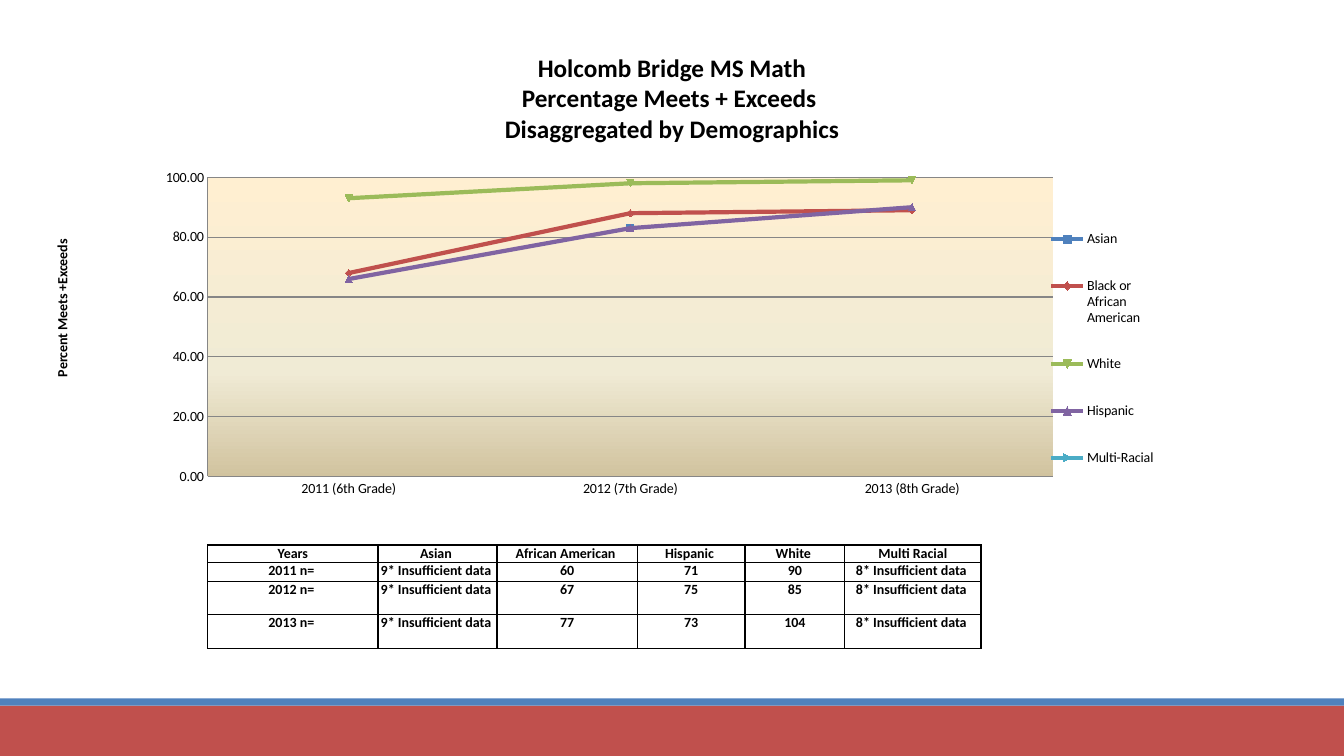
from lxml import etree
from pptx import Presentation, util as u
from pptx.chart.data import CategoryChartData
from pptx.dml.color import RGBColor
from pptx.enum import chart as ch, shapes, text
from pptx.oxml import parse_xml
from pptx.oxml.ns import nsdecls, qn

WIDTH, HEIGHT = 13.33, 7.5
FONT = "Calibri"
COLORS = {
    "ink": "000000", "grid": "868686", "band": "C0504D", "stripe": "4F81BD",
    "Asian": "4F81BD", "Black or African American": "C0504D", "White": "9BBB59",
    "Hispanic": "8064A2", "Multi-Racial": "4BACC6",
}
PLOT_GRADIENT = {0: "FFEFD1", 65: "F0EBD5", 100: "D1C39F"}
GRADES = ["2011 (6th Grade)", "2012 (7th Grade)", "2013 (8th Grade)"]
MEETS_EXCEEDS = {
    "Asian": (None, 83, None),
    "Black or African American": (68, 88, 89),
    "White": (93, 98, 99),
    "Hispanic": (66, 83, 90),
    "Multi-Racial": (None, None, None),
}
COUNTS = [
    ["Years", "Asian ", "African American ", "Hispanic ", "White ", "Multi Racial"],
    *[[f"{year} n= ", "9* Insufficient data ", *counts, "8* Insufficient data "]
      for year, counts in ((2011, ("60", "71", "90")),
                           (2012, ("67", "75", "85")),
                           (2013, ("77", "73", "104")))],
]
COUNT_COLUMNS = [1.69, 1.18, 1.39, 1.07, 0.99, 1.35]
COUNT_ROWS = [0.17, 0.19, 0.33, 0.34]
OPEN_ROWS = 12  # unruled rows of the table that lie behind the chart
TABLE_TOP, COUNTS_TOP = 3.21, 5.41


def rgb(name):
    return RGBColor.from_string(COLORS[name])


def inches(*lengths):
    return [u.Inches(length) for length in lengths]


def set_all(target, **values):
    for name, value in values.items():
        setattr(target, name, value)


def style_font(font, size, bold=False):
    set_all(font, name=FONT, size=u.Pt(size), bold=bold)
    font.color.rgb = rgb("ink")


def style_line(line, color, width):
    line.color.rgb = rgb(color)
    line.width = u.Pt(width)


def add_band(slide, top, height, color):
    band = slide.shapes.add_shape(shapes.MSO_SHAPE.RECTANGLE,
                                  *inches(0, top, WIDTH, height))
    band.shadow.inherit = False
    band.fill.solid()
    band.fill.fore_color.rgb = rgb(color)
    band.line.fill.background()


def write_title(slide, lines):
    title = slide.shapes.title
    set_all(title, **dict(zip(("left", "top", "width", "height"),
                              inches(3.33, 0.47, 6.67, 1.01))))
    set_all(title.text_frame, text="\v".join(lines), word_wrap=True,
            auto_size=text.MSO_AUTO_SIZE.NONE,
            vertical_anchor=text.MSO_ANCHOR.TOP)
    heading = title.text_frame.paragraphs[0]
    heading.alignment = text.PP_ALIGN.CENTER
    for run in heading.runs:
        style_font(run.font, 18, bold=True)


def place_in_chart(part, index, target=None, **shares):
    """Give a chart part a manual layout in shares of the chart's size."""
    for old in part.findall(qn("c:layout")):
        part.remove(old)
    layout = parse_xml(f'<c:layout {nsdecls("c")}><c:manualLayout/></c:layout>')
    settings = {"layoutTarget": target} if target else {}
    settings |= {f"{axis}Mode": "edge" for axis in "xy"} | shares
    for name, value in settings.items():
        etree.SubElement(layout[0], qn(f"c:{name}")).set("val", str(value))
    part.insert(index, layout)


def fill_plot(plot_area):
    stops = "".join(f'<a:gs pos="{share * 1000}"><a:srgbClr val="{color}"/></a:gs>'
                    for share, color in PLOT_GRADIENT.items())
    plot_area.append(parse_xml(
        f'<c:spPr {nsdecls("c", "a")}><a:gradFill><a:gsLst>{stops}</a:gsLst>'
        '<a:lin ang="5400000" scaled="0"/></a:gradFill></c:spPr>'))


def add_trend_chart(slide):
    results = CategoryChartData(number_format="0.00")
    results.categories = GRADES
    for group, percents in MEETS_EXCEEDS.items():
        results.add_series(group, percents)
    chart = slide.shapes.add_chart(ch.XL_CHART_TYPE.LINE_MARKERS,
                                   *inches(0.5, 1.48, 11, 3.63), results).chart
    chart.has_title = False
    style_font(chart.font, 10)

    for series in chart.plots[0].series:
        series.smooth = False
        style_line(series.format.line, series.name, 3)

    percent = chart.value_axis
    set_all(percent, minimum_scale=0, maximum_scale=100, major_unit=20,
            has_major_gridlines=True)
    set_all(percent.tick_labels, number_format="0.00",
            number_format_is_linked=False)
    style_line(percent.major_gridlines.format.line, "grid", 0.75)
    for axis in (percent, chart.category_axis):
        set_all(axis, major_tick_mark=ch.XL_TICK_MARK.NONE,
                minor_tick_mark=ch.XL_TICK_MARK.NONE)
        style_line(axis.format.line, "grid", 0.75)

    caption = percent.axis_title
    caption.text_frame.text = "Percent Meets +Exceeds"
    style_font(caption.text_frame.paragraphs[0].runs[0].font, 10, bold=True)

    chart.has_legend = True
    set_all(chart.legend, position=ch.XL_LEGEND_POSITION.RIGHT,
            include_in_layout=False)
    style_font(chart.legend.font, 10)

    plot_area = chart.element.find(".//" + qn("c:plotArea"))
    fill_plot(plot_area)
    place_in_chart(plot_area, 0, "inner", x=0.142, y=0.077, w=0.762, h=0.818)
    place_in_chart(plot_area.find(".//" + qn("c:title")), 1, x=0, y=0.24)
    place_in_chart(chart.element.find(".//" + qn("c:legend")), 1,
                   x=0.9, y=0.14, w=0.1, h=0.81)


def border_cell(cell, sides):
    properties = cell._tc.get_or_add_tcPr()
    for index, side in enumerate("LRTB"):
        paint = (f'<a:solidFill><a:srgbClr val="{COLORS["ink"]}"/></a:solidFill>'
                 if side in sides else "<a:noFill/>")
        properties.insert(index, parse_xml(
            f'<a:ln{side} {nsdecls("a")} w="{u.Pt(1)}">{paint}</a:ln{side}>'))


def clear_cell(cell, sides):
    """Leave a cell without fill or inset, ruled on the given sides."""
    set_all(cell, margin_left=0, margin_right=0, margin_top=0, margin_bottom=0)
    cell.fill.background()
    border_cell(cell, sides)


def write_count(cell, value):
    cell.text = value
    entry = cell.text_frame.paragraphs[0]
    entry.alignment = text.PP_ALIGN.CENTER
    style_font(entry.runs[0].font, 10, bold=True)


def add_count_table(slide):
    open_height = (COUNTS_TOP - TABLE_TOP) / OPEN_ROWS
    heights = [open_height] * OPEN_ROWS + COUNT_ROWS
    table = slide.shapes.add_table(
        len(heights), len(COUNT_COLUMNS),
        *inches(2.06, TABLE_TOP, sum(COUNT_COLUMNS), sum(heights))).table
    set_all(table, first_row=False, horz_banding=False)
    for column, width in zip(table.columns, COUNT_COLUMNS):
        column.width = u.Inches(width)
    for index, (row, height) in enumerate(zip(table.rows, heights)):
        row.height = u.Inches(height)
        for column, cell in enumerate(row.cells):
            if index >= OPEN_ROWS:
                clear_cell(cell, "LRTB")
                write_count(cell, COUNTS[index - OPEN_ROWS][column])
            else:
                clear_cell(cell, "B" if index == OPEN_ROWS - 1 else "")
                ending = etree.SubElement(cell.text_frame.paragraphs[0]._p,
                                          qn("a:endParaRPr"))
                ending.set("sz", "1000")


def main():
    deck = Presentation()
    set_all(deck, slide_width=u.Inches(WIDTH), slide_height=u.Inches(HEIGHT))
    slide = deck.slides.add_slide(deck.slide_layouts.get_by_name("Title Only"))
    add_band(slide, 7, 0.5, "band")
    add_band(slide, 6.93, 0.07, "stripe")
    write_title(slide, ["Holcomb Bridge MS Math",
                        "Percentage Meets + Exceeds ",
                        "Disaggregated by Demographics"])
    add_count_table(slide)
    add_trend_chart(slide)
    deck.save("out.pptx")


if __name__ == "__main__":
    main()
